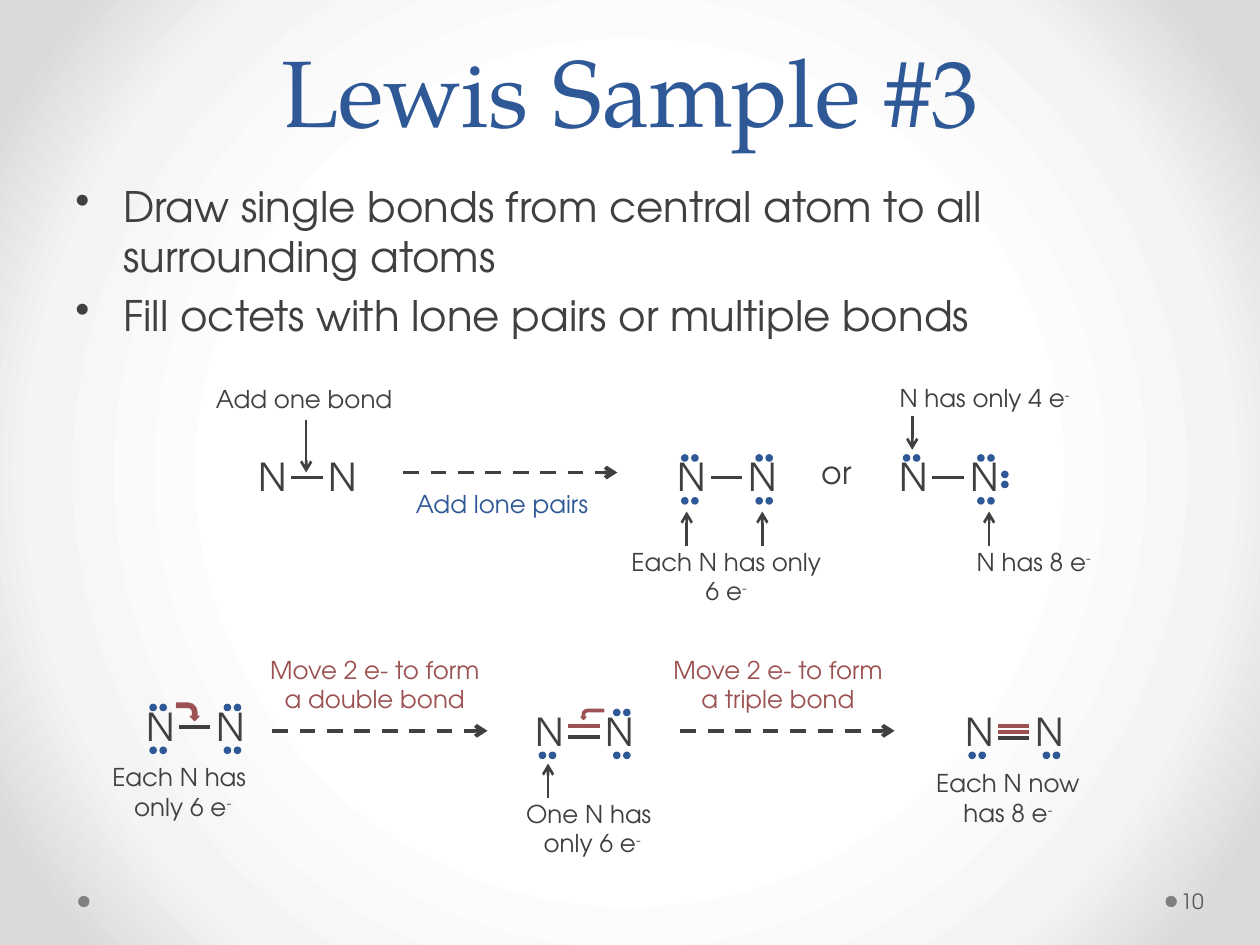
"""Build the Lewis structure sample slide for the N2 molecule."""
from dataclasses import dataclass
from typing import Optional

from pptx import Presentation
from pptx.dml.color import RGBColor
from pptx.enum.dml import MSO_LINE
from pptx.enum.shapes import MSO_CONNECTOR, MSO_SHAPE
from pptx.enum.text import MSO_ANCHOR, PP_ALIGN
from pptx.oxml import parse_xml
from pptx.oxml.ns import nsdecls, qn
from pptx.oxml.xmlchemy import OxmlElement
from pptx.util import Inches, Pt

BLUE = RGBColor(0x2F, 0x58, 0x97)
RED = RGBColor(0x9C, 0x52, 0x52)
DARK = RGBColor(0x40, 0x40, 0x40)
GRAY = RGBColor(0x80, 0x80, 0x80)
PAGE_GRAY = RGBColor(0x59, 0x59, 0x59)
SANS, SERIF = "TeX Gyre Adventor", "TeX Gyre Pagella"
LEFT_X, RIGHT_X = 0.14, 0.73
ABOVE_Y, BELOW_Y = 0.06, 0.4
ALL_PAIRS = tuple((x, y) for y in (ABOVE_Y, BELOW_Y) for x in (LEFT_X, RIGHT_X))
BOND_X, BOND_LENGTH = 0.37, 0.25
DOT, DOT_STEP = 0.05, 0.08
BACKGROUND = ((50, "FFFFFF"), (76, "F4F4F4"), (92, "DADADA"))


@dataclass
class Molecule:
    x: float
    y: float
    bonds: tuple = ((0.24, DARK),)
    pairs: tuple = ()
    side_pair: Optional[tuple] = None


@dataclass
class Label:
    x: float
    y: float
    w: float
    h: float
    lines: tuple
    charge: str = ""
    color: RGBColor = DARK
    size: int = 14


@dataclass
class Arrow:
    start: tuple
    end: tuple
    dashed: bool = False


@dataclass
class BentArrow:
    x: float
    y: float
    w: float
    h: float
    rotation: int
    flipped: bool = False


MOLECULES = (
    Molecule(1.94, 3.55),
    Molecule(5.27, 3.55, pairs=ALL_PAIRS),
    Molecule(7.03, 3.55, pairs=((LEFT_X, ABOVE_Y), (RIGHT_X, ABOVE_Y), (RIGHT_X, BELOW_Y)),
             side_pair=(0.92, 0.19)),
    Molecule(1.05, 5.53, pairs=ALL_PAIRS),
    Molecule(4.14, 5.57, ((0.19, RED), (0.28, DARK)),
             ((RIGHT_X, ABOVE_Y), (LEFT_X, BELOW_Y), (RIGHT_X, BELOW_Y))),
    Molecule(7.55, 5.57, ((0.19, RED), (0.24, RED), (0.29, DARK)),
             ((LEFT_X, BELOW_Y), (RIGHT_X, BELOW_Y))),
)
LABELS = (
    Label(6.42, 3.55, 0.44, 0.4, ("or",), size=18),
    Label(1.55, 3, 1.73, 0.34, ("Add one bond",)),
    Label(3.12, 3.83, 1.73, 0.34, ("Add lone pairs",), color=BLUE),
    Label(4.9, 4.29, 1.73, 0.57, ("Each N has only 6 e",), "-"),
    Label(6.95, 2.99, 1.73, 0.34, ("N has only 4 e",), "-"),
    Label(7.6, 4.29, 1.21, 0.34, ("N has 8 e",), "-"),
    Label(1.99, 5.15, 1.97, 0.57, ("Move 2 e- to form a double bond",), color=RED),
    Label(5.19, 5.15, 1.97, 0.57, ("Move 2 e- to form a triple bond",), color=RED),
    Label(0.76, 6, 1.38, 0.57, ("Each N has ", "only 6 e"), "-"),
    Label(4.01, 6.29, 1.38, 0.57, ("One N has ", "only 6 e"), "-"),
    Label(7.31, 6.05, 1.38, 0.57, ("Each N now has 8 e",), "-"),
)
ARROWS = (
    Arrow((3.2, 3.75), (4.9, 3.75), True),
    Arrow((2.16, 5.8), (3.87, 5.8), True),
    Arrow((5.4, 5.8), (7.1, 5.8), True),
    Arrow((2.43, 3.33), (2.43, 3.75)),
    Arrow((7.24, 3.3), (7.24, 3.57)),
    *(Arrow((x, 4.33), (x, 4.06)) for x in (5.45, 6.05, 7.85)),
    Arrow((4.35, 6.33), (4.35, 6.06)),
)
BENT_ARROWS = (BentArrow(1.42, 5.56, 0.14, 0.18, 90),
               BentArrow(4.66, 5.58, 0.08, 0.18, 270, True))


def set_background(s) -> None:
    s.background.fill.gradient()
    stops = "".join(f'<a:gs pos="{pos * 1000}"><a:srgbClr val="{color}"/></a:gs>'
                    for pos, color in BACKGROUND)
    grad = parse_xml(
        f'<a:gradFill {nsdecls("a")} rotWithShape="1"><a:gsLst>{stops}</a:gsLst><a:path path="circle">'
        '<a:fillToRect l="50000" t="50000" r="50000" b="50000"/></a:path></a:gradFill>')
    old = next(s._element.iter(qn("a:gradFill")))
    old.getparent().replace(old, grad)


def add_text_frame(s, x: float, y: float, w: float, h: float):
    tf = s.shapes.add_textbox(Inches(x), Inches(y), Inches(w), Inches(h)).text_frame
    tf.word_wrap = True
    return tf


def add_run(p, text: str, size: float, color: RGBColor = DARK, font: str = SANS):
    r = p.add_run()
    r.text = text
    r.font.size, r.font.name = Pt(size), font
    r.font.color.rgb = color
    return r


def add_filled(shapes, kind, x: float, y: float, w: float, h: float, color: RGBColor, outlined: bool = True):
    sp = shapes.add_shape(kind, Inches(x), Inches(y), Inches(w), Inches(h))
    sp.shadow.inherit = False
    sp.fill.solid()
    sp.fill.fore_color.rgb = color
    if outlined:
        sp.line.color.rgb = color
        sp.line.width = Pt(0.75)
    else:
        sp.line.fill.background()
    return sp


def add_line(s, start: tuple, end: tuple, color: RGBColor, width: float):
    cx = s.shapes.add_connector(MSO_CONNECTOR.STRAIGHT, *(Inches(v) for v in start + end))
    cx.line.color.rgb = color
    cx.line.width = Pt(width)
    cx._element.spPr.append(OxmlElement("a:effectLst"))
    return cx


def add_arrow(s, arrow: Arrow) -> None:
    cx = add_line(s, arrow.start, arrow.end, DARK, 2.25 if arrow.dashed else 1.5)
    if arrow.dashed:
        cx.line.dash_style = MSO_LINE.DASH
    tail = OxmlElement("a:tailEnd")
    tail.set("type", "arrow")
    cx.line._get_or_add_ln().append(tail)


def add_bent_arrow(s, bent: BentArrow) -> None:
    sp = add_filled(s.shapes, MSO_SHAPE.BENT_ARROW, bent.x, bent.y, bent.w, bent.h, RED)
    for i, value in enumerate((0.25, 0.25, 0.25, 0.5)):
        sp.adjustments[i] = value
    sp.rotation = bent.rotation
    if bent.flipped:
        sp._element.spPr.xfrm.set("flipH", "1")


def add_molecule(s, mol: Molecule) -> None:
    tf = add_text_frame(s, mol.x, mol.y, 1, 0.47)
    tf.margin_left, tf.margin_right = Inches(0.11), 0
    p = tf.paragraphs[0]
    tabs, tab = OxmlElement("a:tabLst"), OxmlElement("a:tab")
    tab.set("pos", str(Inches(0.56)))
    tab.set("algn", "l")
    tabs.append(tab)
    p._p.get_or_add_pPr().append(tabs)
    add_run(p, "N\tN", 22)
    for dy, color in mol.bonds:
        x, y = mol.x + BOND_X, mol.y + dy
        add_line(s, (x, y), (x + BOND_LENGTH, y), color, 2.25)
    dots = [(x + i * DOT_STEP, y) for x, y in mol.pairs for i in range(2)]
    if mol.side_pair:
        x, y = mol.side_pair
        dots += [(x, y + i * DOT_STEP) for i in range(2)]
    if dots:
        group = s.shapes.add_group_shape()
        for x, y in dots:
            add_filled(group.shapes, MSO_SHAPE.OVAL, mol.x + x, mol.y + y, DOT, DOT, BLUE)


def add_label(s, label: Label) -> None:
    tf = add_text_frame(s, label.x, label.y, label.w, label.h)
    for i, line in enumerate(label.lines):
        p = tf.add_paragraph() if i else tf.paragraphs[0]
        p.alignment = PP_ALIGN.CENTER
        add_run(p, line, label.size, label.color)
    if label.charge:
        r = add_run(p, label.charge, label.size, label.color)
        r.font._element.set("baseline", "30000")


def add_title(s, text: str) -> None:
    tf = add_text_frame(s, 0.5, 0, 9, 1.21)
    tf.vertical_anchor = MSO_ANCHOR.BOTTOM
    p = tf.paragraphs[0]
    p.alignment, p.line_spacing = PP_ALIGN.CENTER, Pt(58)
    add_run(p, text, 54, BLUE, SERIF)


def add_bullets(s, items: tuple) -> None:
    tf = add_text_frame(s, 0.5, 1.38, 9, 4.95)
    for i, item in enumerate(items):
        p = tf.add_paragraph() if i else tf.paragraphs[0]
        p.space_before = Pt(4.8)
        pPr = p._p.get_or_add_pPr()
        pPr.set("marL", str(Inches(0.38)))
        pPr.set("indent", str(-Inches(0.38)))
        bullet = OxmlElement("a:buChar")
        bullet.set("char", "•")
        pPr.append(bullet)
        add_run(p, item, 24)


def add_footer(s, number: str) -> None:
    for x in (0.62, 9.25):
        add_filled(s.shapes, MSO_SHAPE.OVAL, x, 7.11, 0.09, 0.09, GRAY, False)
    tf = add_text_frame(s, 9.34, 6.95, 0.61, 0.4)
    tf.vertical_anchor = MSO_ANCHOR.MIDDLE
    tf.margin_left, tf.margin_right = Inches(0.03), Inches(0.05)
    add_run(tf.paragraphs[0], number, 12, PAGE_GRAY)


def main() -> None:
    prs = Presentation()
    prs.slide_width, prs.slide_height = Inches(10), Inches(7.5)
    s = prs.slides.add_slide(prs.slide_layouts[6])
    set_background(s)
    add_footer(s, "10")
    add_title(s, "Lewis Sample #3")
    add_bullets(s, ("Draw single bonds from central atom to all surrounding atoms",
                    "Fill octets with lone pairs or multiple bonds"))
    for draw, items in ((add_molecule, MOLECULES), (add_label, LABELS),
                        (add_arrow, ARROWS), (add_bent_arrow, BENT_ARROWS)):
        for item in items:
            draw(s, item)
    prs.save("out.pptx")


if __name__ == "__main__":
    main()
